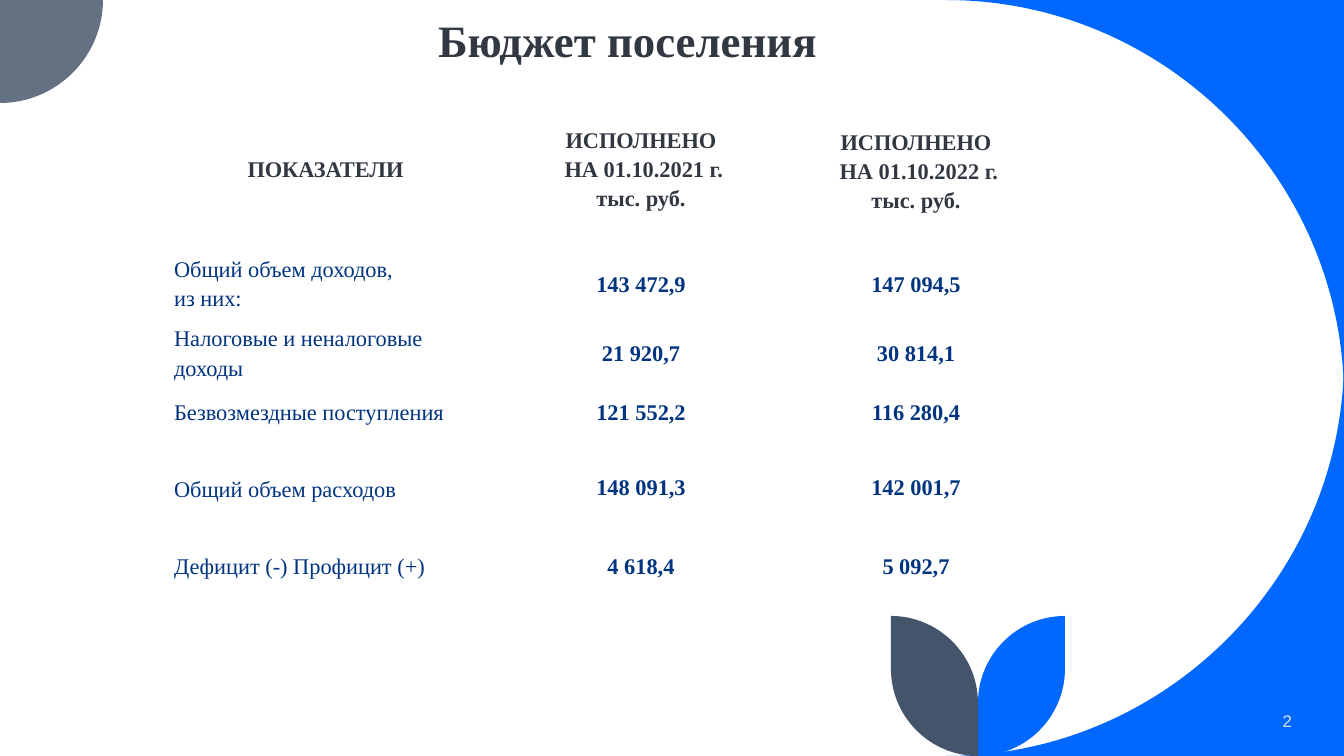
from pptx import Presentation
from pptx.dml.color import RGBColor
from pptx.enum.text import MSO_ANCHOR as Anchor
from pptx.enum.text import MSO_AUTO_SIZE as AutoSize
from pptx.enum.text import PP_ALIGN as Align
from pptx.oxml.ns import qn
from pptx.util import Pt
from lxml.etree import SubElement

WIDTH, HEIGHT = 1344, 756
EMU_PER_PX = 12192000 / WIDTH
ARC_RATIO = 0.55

BLUE = RGBColor(0x00, 0x68, 0xFF)
GREY = RGBColor(0x63, 0x71, 0x83)
SLATE = RGBColor(0x44, 0x54, 0x6A)
INK = RGBColor(0x32, 0x38, 0x41)
NAVY = RGBColor(0x00, 0x34, 0x80)
PALE = RGBColor(0xDA, 0xE5, 0xEF)
SERIF, SANS = "Times New Roman", "Arial"

COLUMN_WIDTHS = [323, 308, 242]
ROW_HEIGHTS = [160, 69, 70, 48, 102, 57]
LOWERED_CELLS = {(0, 2), (4, 0)}
BUDGET = [
    ["ПОКАЗАТЕЛИ",
     "ИСПОЛНЕНО\n НА 01.10.2021 г.\nтыс. руб.",
     "ИСПОЛНЕНО\n НА 01.10.2022 г.\nтыс. руб."],
    ["Общий объем доходов,\nиз них:", "143 472,9", "147 094,5"],
    ["Налоговые и неналоговые\nдоходы", "21 920,7", "30 814,1"],
    ["Безвозмездные поступления", "121 552,2", "116 280,4"],
    ["Общий объем расходов", "148 091,3", "142 001,7"],
    ["Дефицит (-) Профицит (+)", "4 618,4", "5 092,7"],
]


def px(length):
    """Turn pixels into EMU."""
    return round(length * EMU_PER_PX)


def place(shape, left, top, width, height):
    """Move and size a shape in pixels."""
    shape.left, shape.top = px(left), px(top)
    shape.width, shape.height = px(width), px(height)


def format_text(text_frame, font_name, size, color, bold, align):
    """Format every paragraph and run of a text frame."""
    for paragraph in text_frame.paragraphs:
        paragraph.alignment = align
        for run in paragraph.runs:
            font = run.font
            font.name, font.size, font.bold = font_name, Pt(size), bold
            font.color.rgb = color


def quarter(start, corner, end):
    """Return the two handles and the end of a quarter arc that bends toward a corner."""
    handles = [tuple(p + ARC_RATIO * (c - p) for p, c in zip(point, corner))
               for point in (start, end)]
    return handles + [end]


def add_outline(slide, start, segments, color):
    """Draw a filled outline of straight segments (one point) and curves (three points)."""
    points = [(px(x), px(y)) for segment in segments for x, y in segment]
    builder = slide.shapes.build_freeform(px(start[0]), px(start[1]), scale=1.0)
    builder.add_line_segments(points, close=True)
    shape = builder.convert_to_shape()
    lines = iter(list(shape.element.iter(qn("a:lnTo"))))
    for segment in segments:
        parts = [next(lines) for _ in segment]
        if len(parts) == 3:
            curve = SubElement(parts[0].getparent(), qn("a:cubicBezTo"))
            parts[0].addprevious(curve)
            for line in parts:
                curve.append(line[0])
                line.getparent().remove(line)
    shape.fill.solid()
    shape.fill.fore_color.rgb = color
    shape.line.fill.background()
    shape.shadow.inherit = False


def add_corner(slide, corner, arc_start, arc_corner, arc_end, color):
    """Draw a corner piece bounded by one quarter arc."""
    curve = quarter(arc_start, arc_corner, arc_end)
    add_outline(slide, corner, [[arc_start], curve], color)


def add_corners(slide, radius, small_radius):
    """Draw the blue right corners and the grey top left quarter disc."""
    for edge, inner in ((0, radius), (HEIGHT, HEIGHT - radius)):
        corner = (WIDTH, edge)
        add_corner(slide, corner, (WIDTH - radius, edge), corner, (WIDTH, inner), BLUE)
    add_corner(slide, (0, 0), (small_radius, 0), (small_radius, small_radius),
               (0, small_radius), GREY)


def add_leaves(slide, stem_x, top, width, height):
    """Draw two mirrored leaves on either side of the stem."""
    bottom = top + height
    for side, color in ((width, BLUE), (-width, SLATE)):
        tip = (stem_x + side, top)
        shoulder = (stem_x + side, bottom - width)
        foot = (stem_x, bottom)
        waist = (stem_x, top + width)
        add_outline(slide, tip, [
            [shoulder], quarter(shoulder, (stem_x + side, bottom), foot),
            [waist], quarter(waist, (stem_x, top), tip)], color)


def add_title(slide, left, top, width, height):
    """Fill and format the title placeholder."""
    title = slide.shapes.title
    place(title, left, top, width, height)
    frame = title.text_frame
    frame.text = "Бюджет поселения"
    frame.auto_size = AutoSize.NONE
    frame.vertical_anchor = Anchor.BOTTOM
    frame.paragraphs[0].line_spacing = 0.9
    format_text(frame, SERIF, 32, INK, True, Align.CENTER)


def add_page_number(slide, left, top, width, height):
    """Add the page number at the bottom right."""
    box = slide.shapes.add_textbox(0, 0, 0, 0)
    place(box, left, top, width, height)
    frame = box.text_frame
    frame.word_wrap = True
    frame.text = "2"
    frame.vertical_anchor = Anchor.MIDDLE
    format_text(frame, SANS, 12, PALE, False, Align.RIGHT)


def add_budget_table(slide, left, top):
    """Add the budget table with its header row."""
    frame = slide.shapes.add_table(
        len(BUDGET), len(COLUMN_WIDTHS), px(left), px(top),
        px(sum(COLUMN_WIDTHS)), px(sum(ROW_HEIGHTS)))
    table = frame.table
    table.first_row = table.horz_banding = False
    for column, width in zip(table.columns, COLUMN_WIDTHS):
        column.width = px(width)
    for i, (row, height) in enumerate(zip(table.rows, ROW_HEIGHTS)):
        row.height = px(height)
        for j, cell in enumerate(row.cells):
            cell.fill.background()
            cell.vertical_anchor = Anchor.MIDDLE
            if (i, j) in LOWERED_CELLS:
                cell.margin_top = px(9)
            cell.text_frame.text = BUDGET[i][j]
            is_label = i > 0 and j == 0
            format_text(cell.text_frame, SERIF, 16, NAVY if i else INK,
                        not is_label, Align.LEFT if is_label else Align.CENTER)
            for paragraph in cell.text_frame.paragraphs[1:]:
                paragraph.space_before = Pt(3.2)


def main():
    """Build the budget slide and save it."""
    presentation = Presentation()
    presentation.slide_width, presentation.slide_height = px(WIDTH), px(HEIGHT)
    slide = presentation.slides.add_slide(presentation.slide_layouts[5])
    add_corners(slide, 398, 103)
    add_leaves(slide, 978, 616, 87, 140)
    add_title(slide, 247, 24, 761, 48)
    add_page_number(slide, 1120, 701, 182, 40)
    add_budget_table(slide, 164, 90)
    presentation.save("out.pptx")


if __name__ == "__main__":
    main()
